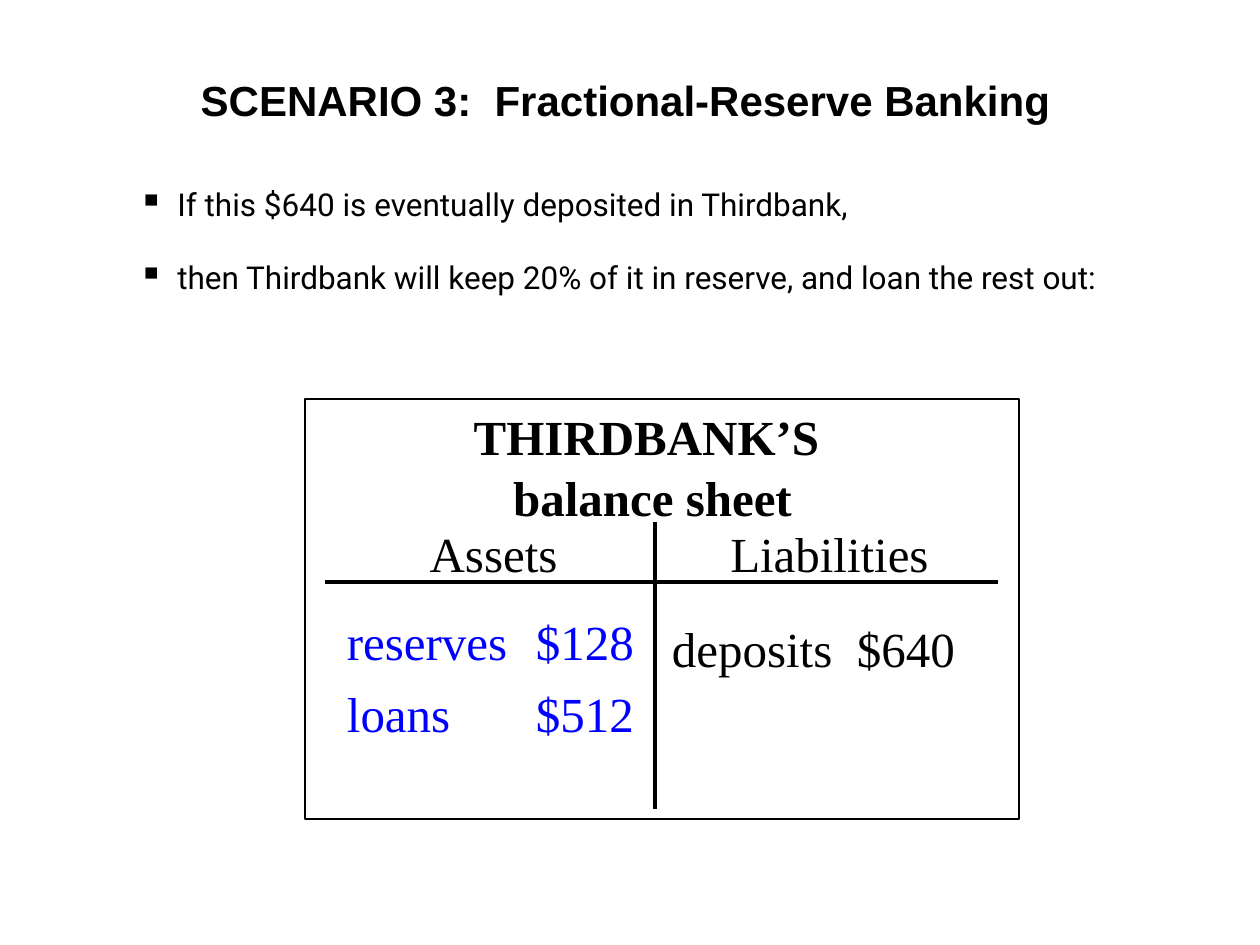
from lxml.etree import SubElement
from pptx import Presentation
from pptx.dml.color import RGBColor
from pptx.enum.shapes import MSO_CONNECTOR, MSO_SHAPE
from pptx.enum.text import MSO_ANCHOR, PP_ALIGN
from pptx.oxml.ns import qn
from pptx.util import Pt

PX = 914400 / 126
COLORS = {"ink": "000000", "paper": "FFFFFF", "asset": "0000FF"}


def box(*lengths):
    return [round(length * PX) for length in lengths]


def write(frame, lines, font, color="ink", align=PP_ALIGN.LEFT, gap=0, spacing=None):
    frame.word_wrap = True
    for index, line in enumerate(lines):
        paragraph = frame.paragraphs[0] if index == 0 else frame.add_paragraph()
        paragraph.text = line
        paragraph.alignment = align
        paragraph.line_spacing = spacing
        paragraph.space_before = Pt(gap if index else 0)
        for run in paragraph.runs:
            for key, value in font.items():
                setattr(run.font, key, value)
            run.font.color.rgb = RGBColor.from_string(COLORS[color])
    return frame.paragraphs


prs = Presentation()
prs.slide_width, prs.slide_height = box(1260, 945)
slide = prs.slides.add_slide(prs.slide_layouts[5])

title = slide.shapes.title
title.left, title.top, title.width, title.height = box(32, 42, 1187, 116)
title.text_frame.vertical_anchor = MSO_ANCHOR.MIDDLE
write(title.text_frame, ["SCENARIO 3:  Fractional-Reserve Banking"],
      {"name": "Arial", "size": Pt(24), "bold": True}, align=PP_ALIGN.CENTER)

sheet = slide.shapes.add_group_shape()
border = sheet.shapes.add_shape(MSO_SHAPE.RECTANGLE, *box(305, 399, 714, 420))
border.shadow.inherit = False
border.fill.solid()
border.fill.fore_color.rgb = RGBColor.from_string(COLORS["paper"])
border.line.color.rgb = RGBColor.from_string(COLORS["ink"])
border.line.width = Pt(0.75)

for ends in [(325, 582, 998, 582), (655, 522, 655, 809)]:
    rule = sheet.shapes.add_connector(MSO_CONNECTOR.STRAIGHT, *box(*ends))
    rule.line.color.rgb = RGBColor.from_string(COLORS["ink"])
    rule.line.width = Pt(2.25)
    SubElement(rule._element.spPr, qn("a:effectLst"))

CENTER, LEFT = PP_ALIGN.CENTER, PP_ALIGN.LEFT
MIDDLE, TOP = MSO_ANCHOR.MIDDLE, MSO_ANCHOR.TOP
entries = [
    (sheet, (411, 431, 483, 68), ["THIRDBANK’S \vbalance sheet"], True, "ink", CENTER, MIDDLE, None),
    (sheet, (378, 514, 231, 74), ["Assets"], False, "ink", CENTER, MIDDLE, None),
    (sheet, (714, 514, 231, 74), ["Liabilities"], False, "ink", CENTER, MIDDLE, None),
    (slide, (672, 609, 315, 74), ["deposits\t$640"], False, "ink", LEFT, MIDDLE, 185),
    (slide, (347, 609, 305, 158), ["reserves\t$128", "loans\t$512"], False, "asset", LEFT, TOP, 189),
]
for parent, area, lines, bold, color, align, anchor, tab in entries:
    entry = parent.shapes.add_textbox(*box(*area))
    frame = entry.text_frame
    for side in ("left", "top", "right", "bottom"):
        setattr(frame, f"margin_{side}", 0)
    frame.vertical_anchor = anchor
    font = {"name": "Times New Roman", "size": Pt(28), "bold": bold}
    for paragraph in write(frame, lines, font, color, align, gap=5.6, spacing=1.05):
        if tab:
            stops = SubElement(paragraph._p.get_or_add_pPr(), qn("a:tabLst"))
            SubElement(stops, qn("a:tab"), pos=str(round(tab * PX)), algn="l")

points = [
    ((126, 179, 1050, 73), "If this $640 is eventually deposited in Thirdbank,"),
    ((126, 252, 1050, 136), "then Thirdbank will keep 20% of it in reserve, and loan the rest out:"),
]
for area, sentence in points:
    point = slide.shapes.add_textbox(*box(*area))
    paragraph = write(point.text_frame, [sentence], {"name": "Roboto", "size": Pt(18)})[0]
    properties = paragraph._p.get_or_add_pPr()
    indent = round(39 * PX)
    properties.set("marL", str(indent))
    properties.set("indent", str(-indent))
    bullet_color = SubElement(properties, qn("a:buClr"))
    SubElement(bullet_color, qn("a:srgbClr"), val=COLORS["ink"])
    SubElement(properties, qn("a:buSzPct"), val="110000")
    SubElement(properties, qn("a:buChar"), char="▪")

prs.save("out.pptx")
